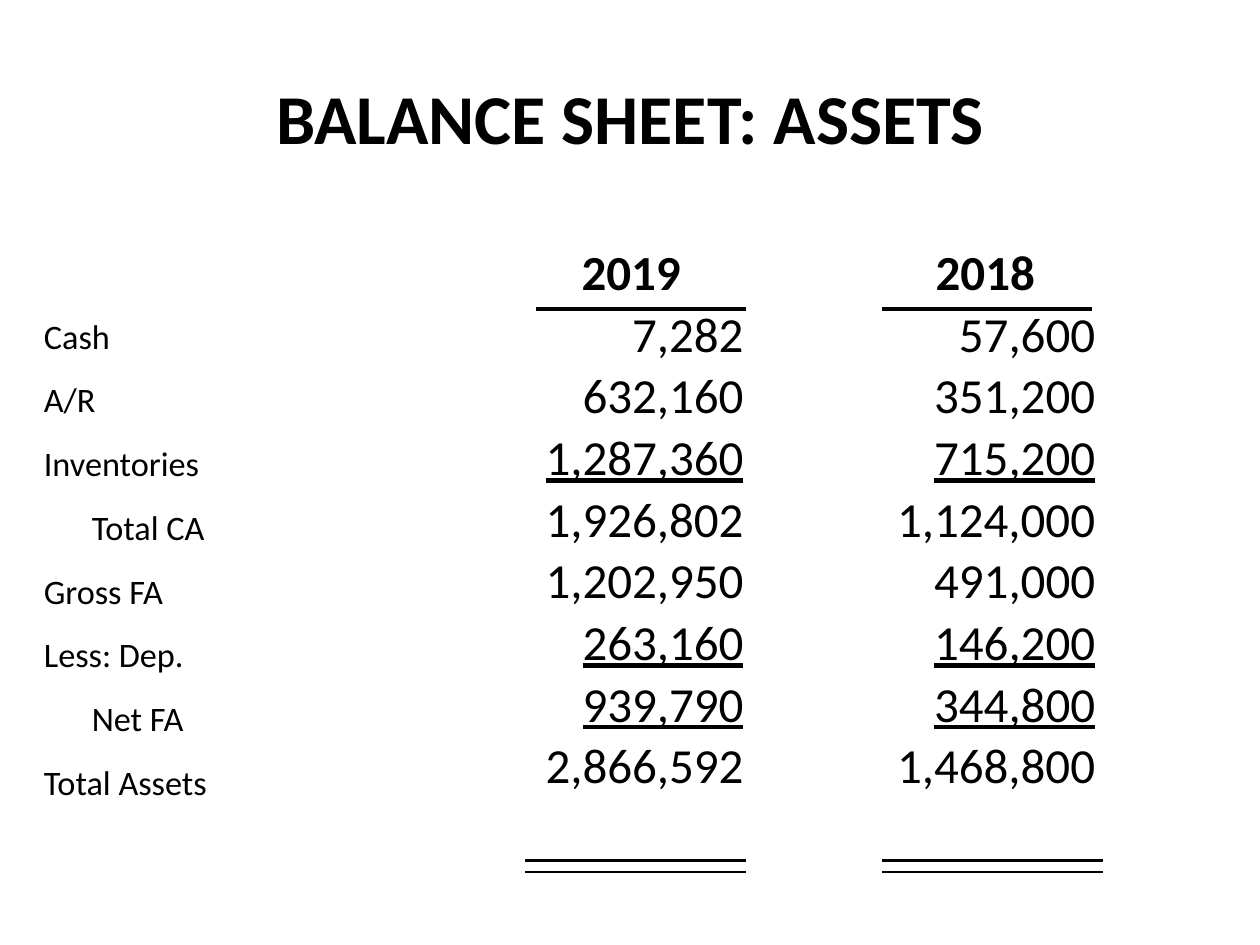
from dataclasses import dataclass

from lxml.etree import SubElement
from pptx import Presentation
from pptx.dml.color import RGBColor
from pptx.enum.shapes import MSO_CONNECTOR
from pptx.enum.text import MSO_ANCHOR, PP_ALIGN
from pptx.oxml.ns import qn
from pptx.util import Inches, Pt


@dataclass(frozen=True)
class Theme:
    font: str = "Calibri"
    ink: RGBColor = RGBColor(0, 0, 0)
    title: float = 40
    label: float = 19.6
    figure: float = 28
    header_rule: float = 2.5
    total_rule: float = 1.5


THEME = Theme()
HEADER_RULE_Y = 2.45
TOTAL_RULES_Y = (6.83, 6.92)
UNDERLINED = {"Inventories", "Less: Dep.", "Net FA"}
SUBTOTALS = {"Total CA", "Net FA"}
ROWS = [
    ("Cash", "7,282", "57,600"),
    ("A/R", "632,160", "351,200"),
    ("Inventories", "1,287,360", "715,200"),
    ("Total CA", "1,926,802", "1,124,000"),
    ("Gross FA", "1,202,950", "491,000"),
    ("Less: Dep.", "263,160", "146,200"),
    ("Net FA", "939,790", "344,800"),
    ("Total Assets", "2,866,592", "1,468,800"),
]


def add_box(slide, left, top, width, height, anchor=MSO_ANCHOR.TOP, inset=0.05):
    sp = slide.shapes.add_textbox(*map(Inches, (left, top, width, height)))
    tf = sp.text_frame
    tf.word_wrap = True
    tf.vertical_anchor = anchor
    tf.margin_top = Inches(inset)
    return tf


def add_text(tf, text, size, align=PP_ALIGN.LEFT, bold=False, underline=False,
             indent=0, tab=0, before=0, after=0, spacing=1.0):
    p = tf.paragraphs[0] if not tf.text else tf.add_paragraph()
    p.alignment = align
    p.line_spacing = spacing
    p.space_before, p.space_after = Pt(before), Pt(after)
    pPr = p._p.get_or_add_pPr()
    pPr.set("marL", str(Inches(indent)))
    pPr.set("indent", "0")
    if tab:
        tabs = SubElement(pPr, qn("a:tabLst"))
        SubElement(tabs, qn("a:tab"), pos=str(Inches(tab)), algn="l")
    r = p.add_run()
    r.text = text
    r.font.name, r.font.size = THEME.font, Pt(size)
    r.font.bold, r.font.underline = bold, underline
    r.font.color.rgb = THEME.ink


def add_rule(slide, left, right, y, weight):
    cx = slide.shapes.add_connector(
        MSO_CONNECTOR.STRAIGHT, *map(Inches, (left, y, right, y)))
    cx.line.color.rgb = THEME.ink
    cx.line.width = Pt(weight)
    SubElement(cx._element.spPr, qn("a:effectLst"))


def add_labels(slide):
    tf = add_box(slide, 0.25, 1.75, 9.25, 4.95, inset=0.75)
    for label, *_ in ROWS:
        add_text(tf, label, THEME.label, after=12.9,
                 indent=0.38 if label in SUBTOTALS else 0)


def add_year(slide, year, column, left, width, shift, rule_left, total_left):
    tf = add_box(slide, left, 1.92, width, 4.82)
    add_text(tf, year, THEME.figure, align=PP_ALIGN.CENTER, bold=True,
             indent=shift, spacing=0.9)
    for row in ROWS:
        figure, ruled = row[column], row[0] in UNDERLINED
        padded = ruled and len(figure) < len("1,000,000")
        add_text(tf, "\t" + figure if padded else figure, THEME.figure,
                 align=PP_ALIGN.RIGHT, underline=ruled,
                 tab=0.27 if padded else 0, before=5, spacing=0.9)
    add_rule(slide, rule_left, rule_left + 1.67, HEADER_RULE_Y, THEME.header_rule)
    for y in TOTAL_RULES_Y:
        add_rule(slide, total_left, total_left + 1.75, y, THEME.total_rule)


def main():
    prs = Presentation()
    prs.slide_width, prs.slide_height = Inches(10), Inches(7.5)
    slide = prs.slides.add_slide(prs.slide_layouts[6])
    title = add_box(slide, 0.5, 0.3, 9, 1.25, anchor=MSO_ANCHOR.MIDDLE)
    add_text(title, "BALANCE SHEET: ASSETS", THEME.title,
             align=PP_ALIGN.CENTER, bold=True)
    add_labels(slide)
    add_year(slide, "2019", 1, left=3.5, width=2.5, shift=0.52,
             rule_left=4.25, total_left=4.17)
    add_year(slide, "2018", 2, left=6.5, width=2.29, shift=0.35,
             rule_left=7, total_left=7)
    prs.save("out.pptx")


if __name__ == "__main__":
    main()
